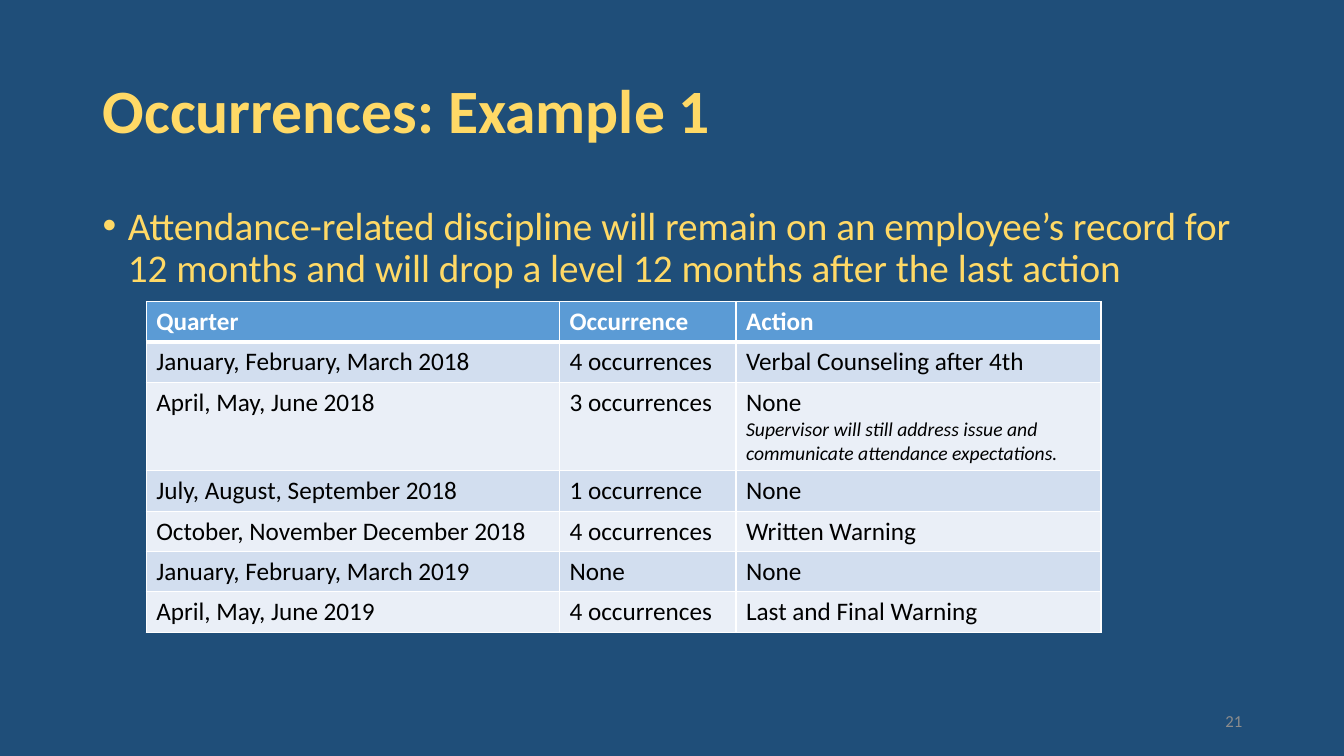
from dataclasses import dataclass

from lxml import etree
from pptx import Presentation
from pptx import util as u
from pptx.dml.color import RGBColor
from pptx.enum import text
from pptx.oxml.ns import qn


@dataclass(frozen=True)
class Theme:
    font: str = "Calibri"
    background: str = "1F4E79"
    gold: str = "FFD966"
    header: str = "5B9BD5"
    bands: tuple = ("D2DEEF", "EAEFF7")
    white: str = "FFFFFF"
    black: str = "000000"
    gray: str = "8C8C8C"
    title_size: int = 44
    body_size: int = 28
    table_size: int = 18
    remark_size: int = 14
    number_size: int = 12
    thin_border: int = 1
    thick_border: int = 3


THEME = Theme()

COLUMN_WIDTHS = (4.1, 1.75, 3.62)
ROW_HEIGHT = 0.4
REMARK_ROW_HEIGHT = 0.88
ROWS = (
    ("Quarter", "Occurrence", "Action"),
    ("January, February, March 2018", "4 occurrences", "Verbal Counseling after 4th"),
    (
        "April, May, June 2018",
        "3 occurrences",
        "None\nSupervisor will still address issue and communicate attendance expectations.",
    ),
    ("July, August, September 2018", "1 occurrence", "None"),
    ("October, November December 2018", "4 occurrences", "Written Warning"),
    ("January, February, March 2019", "None", "None"),
    ("April, May, June 2019", "4 occurrences", "Last and Final Warning"),
)


def format_runs(paragraph, size, color, bold=False, italic=False):
    for run in paragraph.runs:
        run.font.name = THEME.font
        run.font.size = u.Pt(size)
        run.font.bold = bold
        run.font.italic = italic
        run.font.color.rgb = RGBColor.from_string(color)


def add_text(slide, box, content, size, color, bold=False, anchor=text.MSO_ANCHOR.MIDDLE):
    shape = slide.shapes.add_textbox(*(u.Inches(length) for length in box))
    frame = shape.text_frame
    frame.word_wrap = True
    frame.vertical_anchor = anchor
    frame.text = content
    paragraph = frame.paragraphs[0]
    format_runs(paragraph, size, color, bold)
    return paragraph


def add_bullet(paragraph):
    properties = paragraph._p.get_or_add_pPr()
    properties.set("marL", str(u.Inches(0.25)))
    properties.set("indent", str(u.Inches(-0.25)))
    etree.SubElement(properties, qn("a:buFont"), typeface="Arial")
    etree.SubElement(properties, qn("a:buChar"), char="•")


def set_borders(cell, top, bottom):
    properties = cell._tc.get_or_add_tcPr()
    widths = {"lnL": THEME.thin_border, "lnR": THEME.thin_border, "lnT": top, "lnB": bottom}
    for position, (side, width) in enumerate(widths.items()):
        line = etree.Element(qn(f"a:{side}"), w=str(u.Pt(width)))
        fill = etree.SubElement(line, qn("a:solidFill"))
        etree.SubElement(fill, qn("a:srgbClr"), val=THEME.white)
        properties.insert(position, line)


def fill_cell(cell, content, row_index):
    is_header = row_index == 0
    color = THEME.header if is_header else THEME.bands[(row_index - 1) % 2]
    cell.fill.solid()
    cell.fill.fore_color.rgb = RGBColor.from_string(color)
    set_borders(
        cell,
        top=THEME.thick_border if row_index == 1 else THEME.thin_border,
        bottom=THEME.thick_border if is_header else THEME.thin_border,
    )
    cell.text_frame.text = content
    for index, paragraph in enumerate(cell.text_frame.paragraphs):
        is_remark = index > 0
        format_runs(
            paragraph,
            THEME.remark_size if is_remark else THEME.table_size,
            THEME.white if is_header else THEME.black,
            bold=is_header,
            italic=is_remark,
        )


def add_occurrence_table(slide, left, top):
    heights = [
        REMARK_ROW_HEIGHT if any("\n" in content for content in row) else ROW_HEIGHT
        for row in ROWS
    ]
    table = slide.shapes.add_table(
        len(ROWS),
        len(COLUMN_WIDTHS),
        u.Inches(left),
        u.Inches(top),
        u.Inches(sum(COLUMN_WIDTHS)),
        u.Inches(sum(heights)),
    ).table
    for column, width in zip(table.columns, COLUMN_WIDTHS):
        column.width = u.Inches(width)
    for row_index, (row, height) in enumerate(zip(ROWS, heights)):
        table.rows[row_index].height = u.Inches(height)
        for column_index, content in enumerate(row):
            fill_cell(table.cell(row_index, column_index), content, row_index)


def main():
    presentation = Presentation()
    presentation.slide_width = u.Inches(13.33)
    presentation.slide_height = u.Inches(7.5)
    slide = presentation.slides.add_slide(presentation.slide_layouts[6])
    slide.background.fill.solid()
    slide.background.fill.fore_color.rgb = RGBColor.from_string(THEME.background)

    title = add_text(
        slide, (0.92, 0.4, 11.5, 1.45), "Occurrences: Example 1",
        THEME.title_size, THEME.gold, bold=True,
    )
    title.line_spacing = 0.9

    policy = add_text(
        slide, (0.92, 2, 11.5, 1.08),
        "Attendance-related discipline will remain on an employee’s record for "
        "12 months and will drop a level 12 months after the last action",
        THEME.body_size, THEME.gold, anchor=text.MSO_ANCHOR.TOP,
    )
    policy.line_spacing = 0.9
    policy.space_before = u.Pt(10)
    add_bullet(policy)

    add_occurrence_table(slide, 1.45, 2.99)

    number = add_text(slide, (9.42, 6.95, 3, 0.4), "21", THEME.number_size, THEME.gray)
    number.alignment = text.PP_ALIGN.RIGHT

    presentation.save("out.pptx")


if __name__ == "__main__":
    main()
